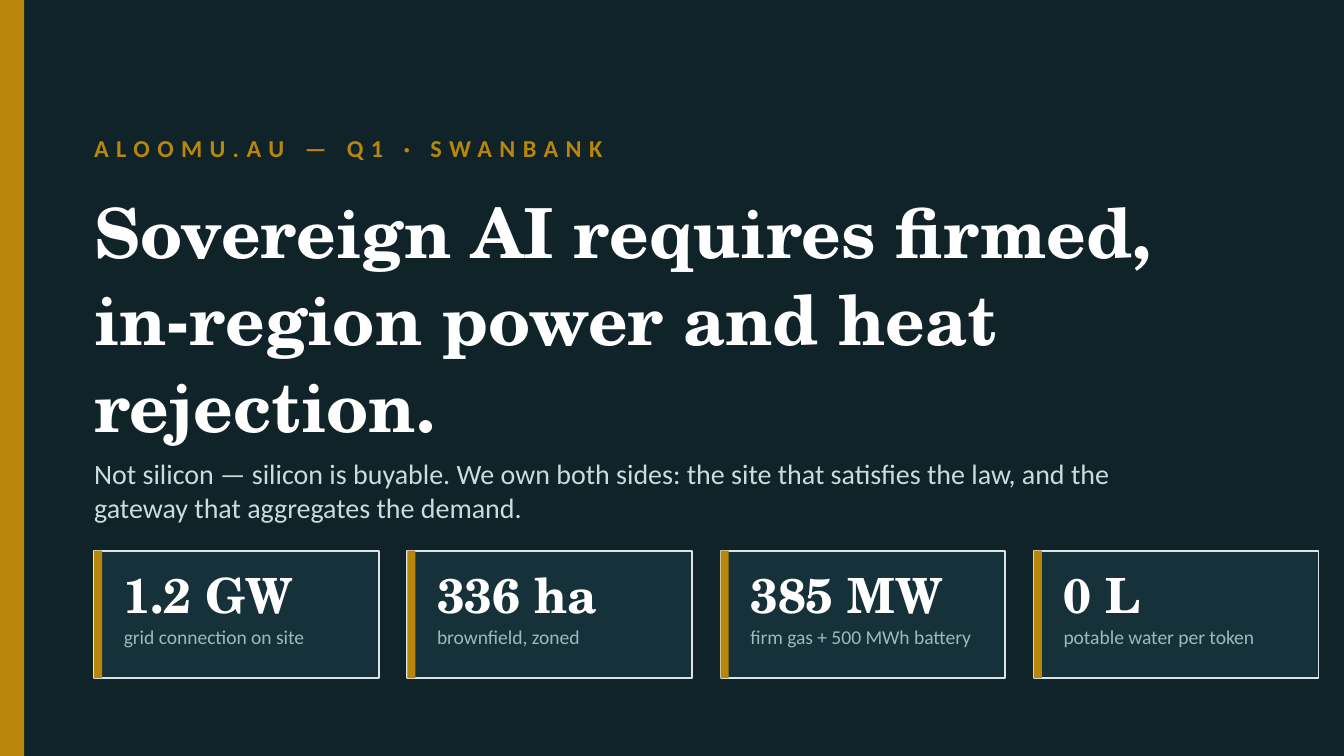
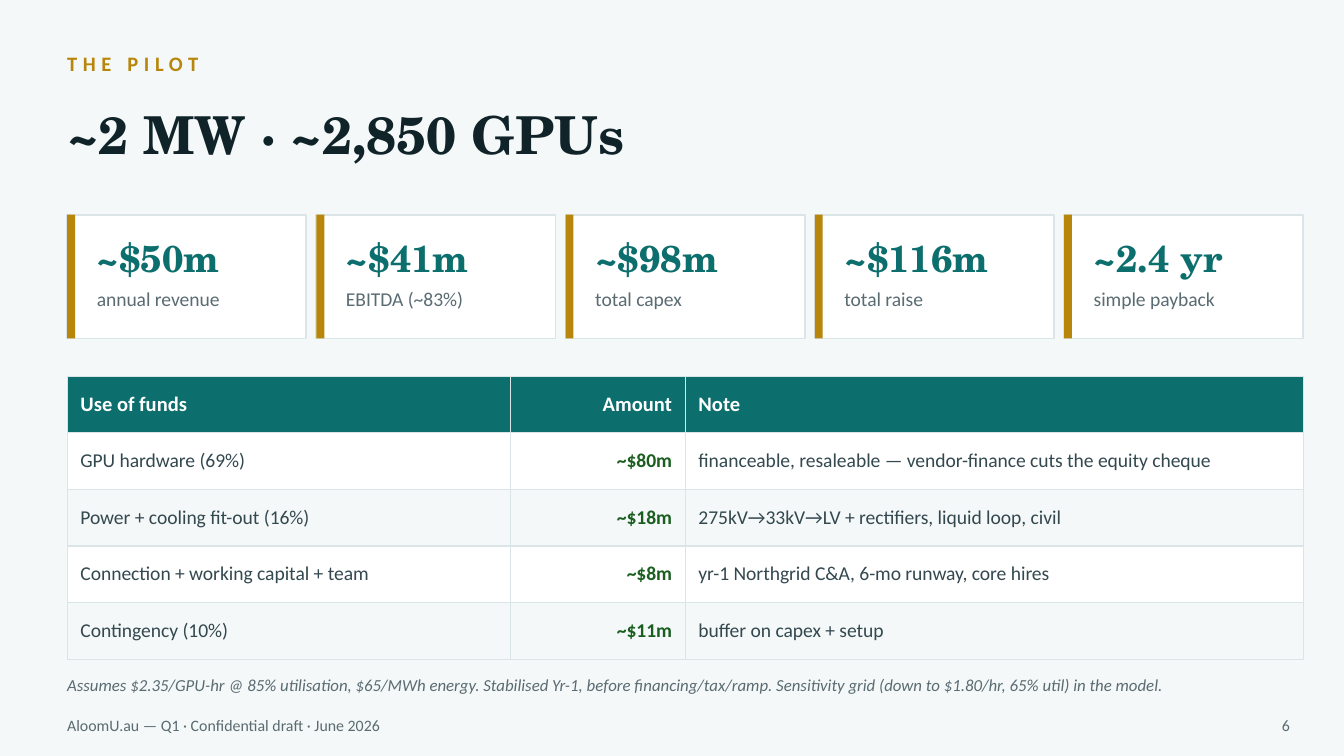
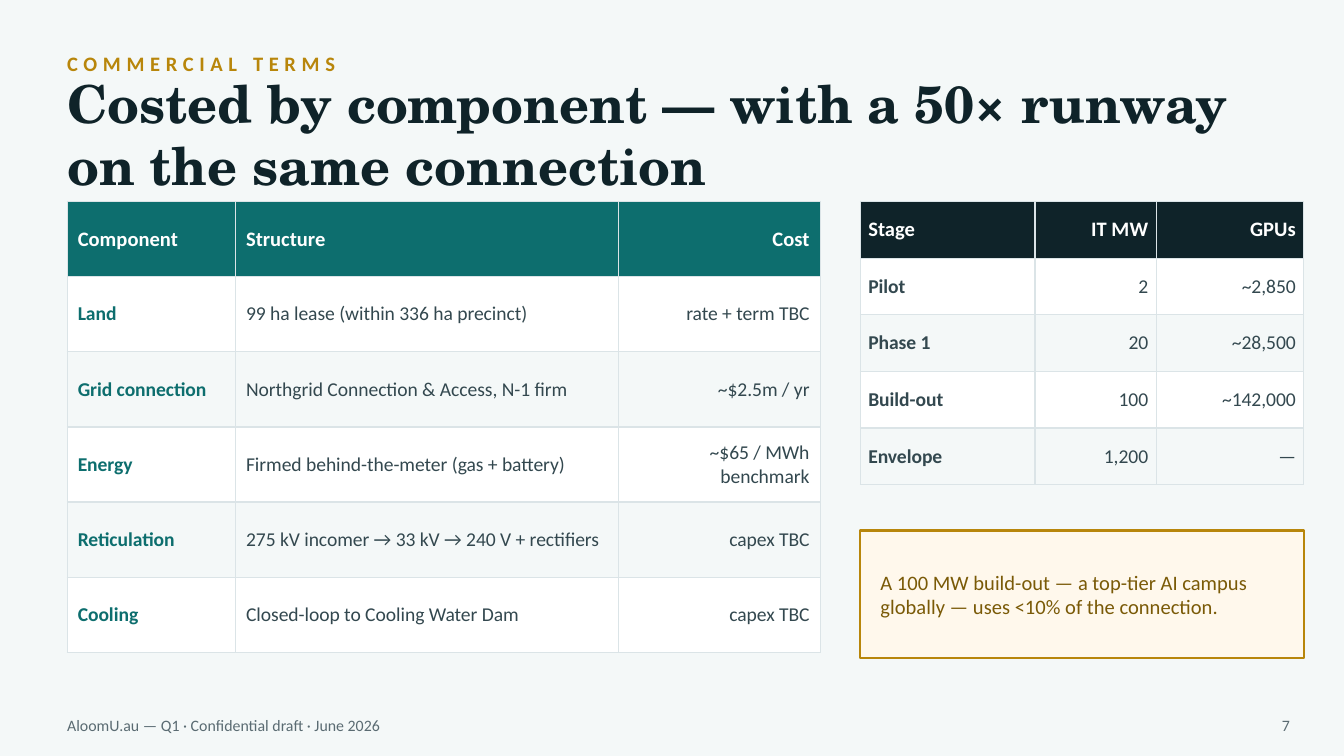
"""Build the three-slide Q1 investor deck."""
from lxml.etree import SubElement
from pptx import Presentation
from pptx.dml.color import RGBColor
from pptx.enum.shapes import MSO_SHAPE as SHAPE
from pptx.enum.text import MSO_ANCHOR as ANCHOR, MSO_AUTO_SIZE as AUTO, PP_ALIGN as ALIGN
from pptx.oxml.ns import qn
from pptx.util import Cm, Pt

SERIF, SANS = "TeX Gyre Schola", "Calibri"
INK = RGBColor(0x0F, 0x23, 0x29)
PALE = RGBColor(0xF4, 0xF8, 0xF8)
WHITE = RGBColor(0xFF, 0xFF, 0xFF)
GOLD = RGBColor(0xB8, 0x86, 0x0B)
TEAL = RGBColor(0x0D, 0x6E, 0x6E)
GREEN = RGBColor(0x1B, 0x5E, 0x20)
BODY = RGBColor(0x33, 0x48, 0x4F)
MUTED = RGBColor(0x5A, 0x6B, 0x72)
RULE = RGBColor(0xDB, 0xE4, 0xE7)
MIST = RGBColor(0xCA, 0xDC, 0xDC)
HAZE = RGBColor(0x9F, 0xB8, 0xBE)
PANEL = RGBColor(0x16, 0x31, 0x3A)
CREAM = RGBColor(0xFF, 0xF8, 0xEC)
BROWN = RGBColor(0x7A, 0x5A, 0x07)

MARGIN = 1.27
FOOTER = "AloomU.au — Q1 · Confidential draft · June 2026"


def write(tf, text, size=10.5, color=BODY, font=SANS, bold=False, italic=False,
          align=ALIGN.LEFT, spacing=None, tracking=None):
    """Fill a text frame, one paragraph per line of text."""
    for i, line in enumerate(text.split("\n")):
        p = tf.add_paragraph() if i else tf.paragraphs[0]
        p.alignment = align
        p.space_before = Pt(0)
        if spacing:
            p.line_spacing = spacing
        r = p.add_run()
        r.text = line
        r.font.name, r.font.size = font, Pt(size)
        r.font.bold, r.font.italic = bold, italic
        r.font.color.rgb = color
        if tracking:
            r.font._element.set("spc", str(tracking * 100))


def set_frame(tf, anchor=ANCHOR.MIDDLE, inset=0):
    """Give a text frame its anchor, wrapping and side insets."""
    tf.word_wrap = True
    tf.auto_size = AUTO.NONE
    tf.vertical_anchor = anchor
    tf.margin_left = tf.margin_right = Cm(inset)
    tf.margin_top = tf.margin_bottom = 0


def add_text(s, box, text, anchor=ANCHOR.MIDDLE, **fmt):
    """Add a text box without insets."""
    tf = s.shapes.add_textbox(*map(Cm, box)).text_frame
    set_frame(tf, anchor)
    write(tf, text, **fmt)


def fill_placeholder(sp, box, text, **fmt):
    """Move a placeholder and write its text."""
    sp.left, sp.top, sp.width, sp.height = map(Cm, box)
    set_frame(sp.text_frame)
    write(sp.text_frame, text, **fmt)


def add_rect(s, box, fill, line=None, weight=1):
    """Add a flat rectangle with an optional outline."""
    sp = s.shapes.add_shape(SHAPE.RECTANGLE, *map(Cm, box))
    sp.shadow.inherit = False
    sp.fill.solid()
    sp.fill.fore_color.rgb = fill
    if line is None:
        sp.line.fill.background()
    else:
        sp.line.color.rgb = line
        sp.line.width = Pt(weight)
    return sp


def add_cards(s, stats, left, top, width, height, pitch, size, fill, value_color, label_color):
    """Add a row of figure cards, each with a gold edge."""
    for i, (value, label) in enumerate(stats):
        x = left + i * pitch
        add_rect(s, (x, top, width, height), fill, RULE)
        add_rect(s, (x, top, 0.15, height), GOLD)
        text_x, text_w = x + 0.56, width - 0.81
        add_text(s, (text_x, top + 0.2, text_w, height * 0.52), value,
                 size=size, font=SERIF, bold=True, color=value_color)
        add_text(s, (text_x, top + height * 0.58, text_w, height * 0.38), label,
                 anchor=ANCHOR.TOP, color=label_color)


def set_borders(cell):
    """Draw a thin rule on the four sides of a cell."""
    tcPr = cell._tc.get_or_add_tcPr()
    for side in ("lnL", "lnR", "lnT", "lnB"):
        ln = SubElement(tcPr, qn(f"a:{side}"), w=str(Pt(0.75)))
        SubElement(SubElement(ln, qn("a:solidFill")), qn("a:srgbClr"), val=str(RULE))


def add_grid(s, left, top, widths, row_height, inset, rows, formats, head_fill=TEAL):
    """Add a table with a dark heading row and alternating body rows."""
    frame = s.shapes.add_table(len(rows), len(widths), Cm(left), Cm(top),
                               Cm(sum(widths)), Cm(row_height * len(rows)))
    table = frame.table
    table.horz_banding = False
    for col, width in zip(table.columns, widths):
        col.width = Cm(width)
    for i, values in enumerate(rows):
        table.rows[i].height = Cm(row_height)
        for j, (value, fmt) in enumerate(zip(values, formats)):
            cell = table.cell(i, j)
            set_borders(cell)
            cell.fill.solid()
            cell.fill.fore_color.rgb = (WHITE if i % 2 else PALE) if i else head_fill
            cell.vertical_anchor = ANCHOR.MIDDLE
            cell.margin_left = cell.margin_right = Cm(inset)
            cell.margin_top = cell.margin_bottom = Cm(inset)
            head = {} if i else {"size": 11, "bold": True, "color": WHITE}
            write(cell.text_frame, value, **{**fmt, **head})


def add_slide(prs, layout, background):
    """Add a slide with a plain background."""
    s = prs.slides.add_slide(prs.slide_layouts[layout])
    s.background.fill.solid()
    s.background.fill.fore_color.rgb = background
    return s


def add_content_slide(prs, kicker, title, number):
    """Add a light slide with kicker, title and footer."""
    s = add_slide(prs, 5, PALE)
    add_text(s, (MARGIN, 0.81, 22.86, 0.76), kicker, size=11, bold=True, color=GOLD, tracking=3)
    fill_placeholder(s.shapes.title, (MARGIN, 1.57, 22.86, 1.91), title,
                     size=28, font=SERIF, bold=True, color=INK)
    add_text(s, (MARGIN, 13.39, 15.24, 0.64), FOOTER, size=8.5, color=MUTED)
    add_text(s, (23.62, 13.39, 0.76, 0.64), str(number), size=8.5, color=MUTED, align=ALIGN.RIGHT)
    return s


def build_cover(prs):
    """Build the cover slide."""
    s = add_slide(prs, 0, INK)
    left = 1.78
    add_rect(s, (0, 0, 0.46, 14.29), GOLD)
    add_text(s, (left, 2.29, 21.84, 1.02), "ALOOMU.AU — Q1 · SWANBANK",
             size=13, bold=True, color=GOLD, tracking=4)
    fill_placeholder(s.shapes.title, (left, 3.81, 22.35, 4.32),
                     "Sovereign AI requires firmed,\nin-region power and heat rejection.",
                     size=37, font=SERIF, bold=True, color=WHITE, spacing=1.05)
    fill_placeholder(s.placeholders[1], (left, 8.38, 19.3, 1.78),
                     "Not silicon — silicon is buyable. We own both sides: the site that "
                     "satisfies the law, and the gateway that aggregates the demand.",
                     size=15, color=MIST)
    stats = [("1.2 GW", "grid connection on site"), ("336 ha", "brownfield, zoned"),
             ("385 MW", "firm gas + 500 MWh battery"), ("0 L", "potable water per token")]
    add_cards(s, stats, left, 10.41, 5.38, 2.41, 5.92, 26, PANEL, WHITE, HAZE)


def build_pilot(prs):
    """Build the pilot economics slide."""
    s = add_content_slide(prs, "THE PILOT", "~2 MW · ~2,850 GPUs", 6)
    stats = [("~$50m", "annual revenue"), ("~$41m", "EBITDA (~83%)"), ("~$98m", "total capex"),
             ("~$116m", "total raise"), ("~2.4 yr", "simple payback")]
    add_cards(s, stats, MARGIN, 4.06, 4.52, 2.34, 4.71, 20, WHITE, TEAL, MUTED)
    rows = [
        ("Use of funds", "Amount", "Note"),
        ("GPU hardware (69%)", "~$80m",
         "financeable, resaleable — vendor-finance cuts the equity cheque"),
        ("Power + cooling fit-out (16%)", "~$18m",
         "275kV→33kV→LV + rectifiers, liquid loop, civil"),
        ("Connection + working capital + team", "~$8m",
         "yr-1 Northgrid C&A, 6-mo runway, core hires"),
        ("Contingency (10%)", "~$11m", "buffer on capex + setup"),
    ]
    formats = [{}, {"align": ALIGN.RIGHT, "bold": True, "color": GREEN}, {}]
    add_grid(s, MARGIN, 7.11, (8.38, 3.3, 11.68), 1.07, 0.25, rows, formats)
    add_text(s, (MARGIN, 12.57, 23.37, 0.76),
             "Assumes $2.35/GPU-hr @ 85% utilisation, $65/MWh energy. Stabilised Yr-1, before "
             "financing/tax/ramp. Sensitivity grid (down to $1.80/hr, 65% util) in the model.",
             size=9, italic=True, color=MUTED)


def build_terms(prs):
    """Build the commercial terms slide."""
    s = add_content_slide(prs, "COMMERCIAL TERMS",
                          "Costed by component — with a 50× runway on the same connection", 7)
    top, right_col = 3.81, 16.26
    right = {"align": ALIGN.RIGHT}
    terms = [
        ("Component", "Structure", "Cost"),
        ("Land", "99 ha lease (within 336 ha precinct)", "rate + term TBC"),
        ("Grid connection", "Northgrid Connection & Access, N-1 firm", "~$2.5m / yr"),
        ("Energy", "Firmed behind-the-meter (gas + battery)", "~$65 / MWh benchmark"),
        ("Reticulation", "275 kV incomer → 33 kV → 240 V + rectifiers", "capex TBC"),
        ("Cooling", "Closed-loop to Cooling Water Dam", "capex TBC"),
    ]
    add_grid(s, MARGIN, top, (3.18, 7.24, 3.81), 1.42, 0.2, terms,
             [{"bold": True, "color": TEAL}, {}, right])
    stages = [
        ("Stage", "IT MW", "GPUs"),
        ("Pilot", "2", "~2,850"),
        ("Phase 1", "20", "~28,500"),
        ("Build-out", "100", "~142,000"),
        ("Envelope", "1,200", "—"),
    ]
    add_grid(s, right_col, top, (3.3, 2.29, 2.79), 1.07, 0.15, stages,
             [{"bold": True}, right, right], head_fill=INK)
    sp = add_rect(s, (right_col, 10.03, 8.38, 2.41), CREAM, GOLD, 1.25)
    set_frame(sp.text_frame, inset=0.38)
    write(sp.text_frame, "A 100 MW build-out — a top-tier AI campus globally — "
          "uses <10% of the connection.", size=11, color=BROWN)


def main():
    """Build and save the deck."""
    prs = Presentation()
    prs.slide_width, prs.slide_height = Cm(25.4), Cm(14.29)
    build_cover(prs)
    build_pilot(prs)
    build_terms(prs)
    prs.save("out.pptx")


if __name__ == "__main__":
    main()
